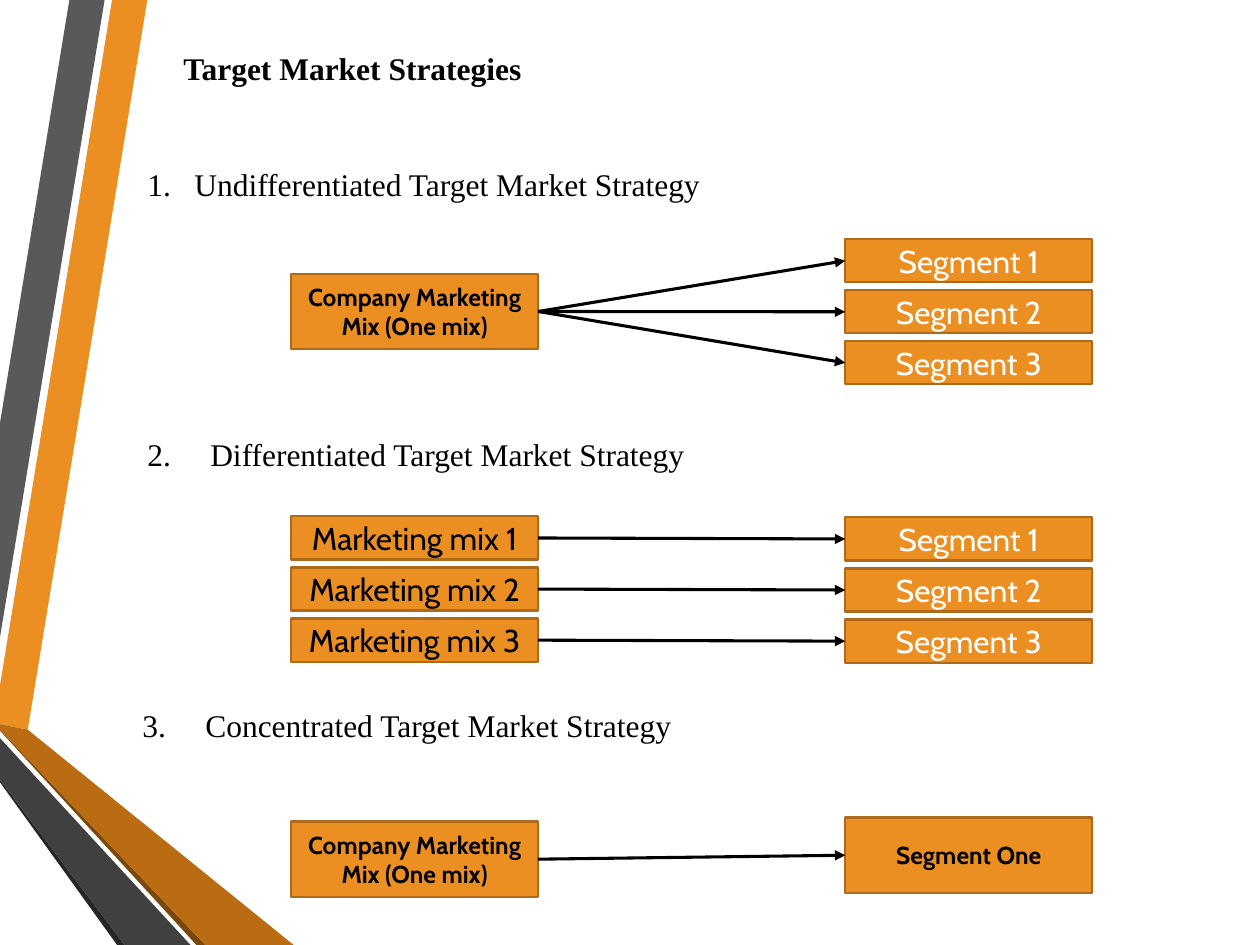
from lxml import etree
from pptx import Presentation
from pptx.dml.color import RGBColor
from pptx.enum.shapes import MSO_CONNECTOR, MSO_SHAPE
from pptx.enum.text import MSO_ANCHOR, PP_ALIGN
from pptx.oxml.ns import qn
from pptx.util import Cm, Pt

RECTANGLE = MSO_SHAPE.RECTANGLE
STRAIGHT = MSO_CONNECTOR.STRAIGHT
MIDDLE = MSO_ANCHOR.MIDDLE
CENTER = PP_ALIGN.CENTER
JUSTIFY = PP_ALIGN.JUSTIFY

ORANGE = RGBColor(0xEB, 0x8F, 0x22)
DARK_ORANGE = RGBColor(0xB9, 0x6C, 0x11)
BROWN = RGBColor(0x7B, 0x48, 0x0B)
BORDER = RGBColor(0xAE, 0x6A, 0x19)
GRAY = RGBColor(0x59, 0x59, 0x59)
DARK_GRAY = RGBColor(0x40, 0x40, 0x40)
CHARCOAL = RGBColor(0x26, 0x26, 0x26)
BLACK = RGBColor(0, 0, 0)
WHITE = RGBColor(0xFF, 0xFF, 0xFF)

HEADING_FONT = "Times New Roman"
BOX_FONT = "Cabin"

MIX_LEFT = 5.87
SEGMENT_LEFT = 17.04
BOX_WIDTH = 4.98
ROW_HEIGHT = 0.87
ROW_PITCH = 1.03
TALL_HEIGHT = 1.52
LEFT_SIDE, RIGHT_SIDE = 1, 3

BANDS = [
    (ORANGE, [(0, 13.82), (0, 14.6), (0.56, 14.71), (2.97, 0), (2.26, 0)]),
    (GRAY, [(2.11, 0), (1.4, 0), (0, 8.53), (0, 12.85)]),
    (CHARCOAL, [(0, 15.72), (0, 15.77), (2.36, 19.05), (2.51, 19.05)]),
    (BROWN, [(0, 14.71), (0, 14.73), (3.96, 19.05), (4.14, 19.05)]),
    (DARK_ORANGE, [(0, 14.71), (4.14, 19.05), (5.92, 19.05),
                   (0.56, 14.71), (0, 14.6)]),
    (DARK_GRAY, [(0, 15.72), (2.51, 19.05), (3.84, 19.05), (0, 14.88)]),
]


def add_band(page, color, points):
    corners = [(Cm(x), Cm(y)) for x, y in points]
    builder = page.shapes.build_freeform(*corners[0])
    builder.add_line_segments(corners[1:], close=True)
    band = builder.convert_to_shape()
    band.shadow.inherit = False
    band.fill.solid()
    band.fill.fore_color.rgb = color
    band.line.fill.background()


def add_span(para, text, font, size, color, bold=False):
    span = para.add_run()
    span.text = text
    span.font.name = font
    span.font.size = Pt(size)
    span.font.color.rgb = color
    span.font.bold = bold


def add_heading(page, left, top, text, bold=False):
    box = page.shapes.add_textbox(Cm(left), Cm(top), Cm(12.7), Cm(1.02))
    box.text_frame.word_wrap = True
    para = box.text_frame.paragraphs[0]
    para.alignment = JUSTIFY
    add_span(para, text, HEADING_FONT, 18, BLACK, bold)
    return para


def set_number(para):
    properties = para._p.get_or_add_pPr()
    properties.set("marL", str(Cm(0.95)))
    properties.set("indent", str(-Cm(0.95)))
    etree.SubElement(properties, qn("a:buFont"), typeface="+mj-lt")
    etree.SubElement(properties, qn("a:buAutoNum"), type="arabicPeriod")


def set_tab(para):
    tabs = etree.SubElement(para._p.get_or_add_pPr(), qn("a:tabLst"))
    etree.SubElement(tabs, qn("a:tab"), pos=str(Cm(1.27)), algn="l")


def add_box(page, left, top, height, text, size, color, bold=False):
    box = page.shapes.add_shape(
        RECTANGLE, Cm(left), Cm(top), Cm(BOX_WIDTH), Cm(height))
    box.shadow.inherit = False
    box.fill.solid()
    box.fill.fore_color.rgb = ORANGE
    box.line.color.rgb = BORDER
    box.line.width = Pt(1.25)
    box.text_frame.word_wrap = True
    box.text_frame.vertical_anchor = MIDDLE
    para = box.text_frame.paragraphs[0]
    para.alignment = CENTER
    add_span(para, text, BOX_FONT, size, color, bold)
    return box


def add_tall_box(page, left, top, text):
    return add_box(page, left, top, TALL_HEIGHT, text, 14, BLACK, True)


def add_stack(page, left, top, label, color):
    return [
        add_box(page, left, top + row * ROW_PITCH, ROW_HEIGHT,
                f"{label} {row + 1}", 18, color)
        for row in range(3)
    ]


def add_arrow(page, source, target):
    arrow = page.shapes.add_connector(STRAIGHT, 0, 0, 0, 0)
    arrow.begin_connect(source, RIGHT_SIDE)
    arrow.end_connect(target, LEFT_SIDE)
    arrow.line.color.rgb = BLACK
    arrow.line.width = Pt(1.75)
    etree.SubElement(arrow.line._get_or_add_ln(), qn("a:tailEnd"), type="triangle")
    etree.SubElement(arrow._element.spPr, qn("a:effectLst"))


def main():
    deck = Presentation()
    deck.slide_width = Cm(25.4)
    deck.slide_height = Cm(19.05)
    page = deck.slides.add_slide(deck.slide_layouts[6])

    for color, points in BANDS:
        add_band(page, color, points)

    add_heading(page, 3.45, 0.87, "Target Market Strategies", True)
    set_number(add_heading(page, 2.72, 3.2, "Undifferentiated Target Market Strategy"))
    set_tab(add_heading(page, 2.72, 8.64, "2.\tDifferentiated Target Market Strategy"))
    set_tab(add_heading(page, 2.62, 14.1, "3.\tConcentrated Target Market Strategy"))

    one_mix = "Company Marketing Mix (One mix)"
    shared_mix = add_tall_box(page, MIX_LEFT, 5.52, one_mix)
    for segment in add_stack(page, SEGMENT_LEFT, 4.82, "Segment", WHITE):
        add_arrow(page, shared_mix, segment)

    mixes = add_stack(page, MIX_LEFT, 10.41, "Marketing mix", BLACK)
    segments = add_stack(page, SEGMENT_LEFT, 10.43, "Segment", WHITE)
    for mix, segment in zip(mixes, segments):
        add_arrow(page, mix, segment)

    single_mix = add_tall_box(page, MIX_LEFT, 16.56, one_mix)
    single_segment = add_tall_box(page, SEGMENT_LEFT, 16.48, "Segment One")
    add_arrow(page, single_mix, single_segment)

    deck.save("out.pptx")


if __name__ == "__main__":
    main()
